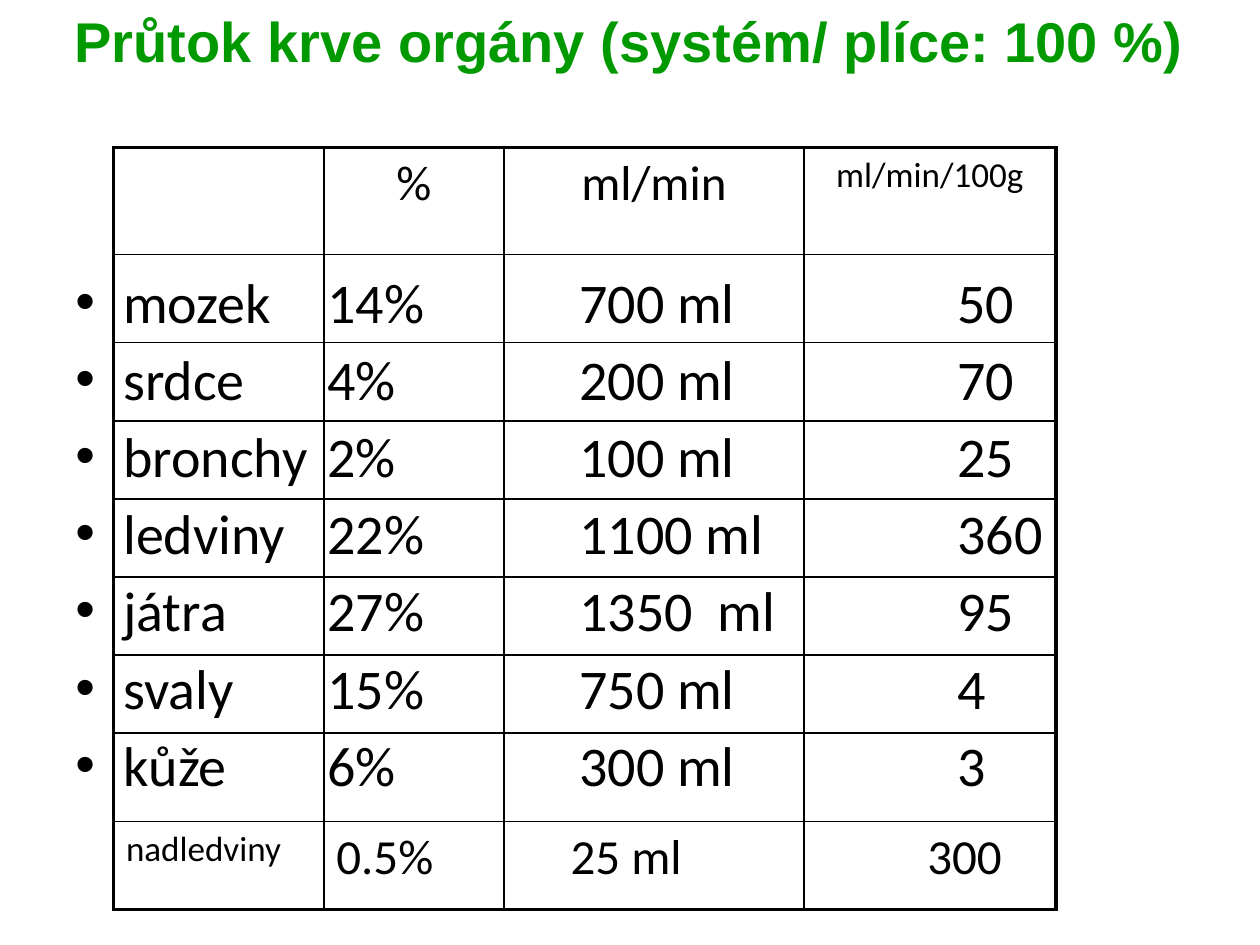
import pptx
import pptx.util
import pptx.dml.color
import pptx.enum.text
import pptx.oxml
import pptx.oxml.ns
from lxml import etree

Inches, Pt = pptx.util.Inches, pptx.util.Pt
PP_ALIGN, MSO_ANCHOR = pptx.enum.text.PP_ALIGN, pptx.enum.text.MSO_ANCHOR
qn = pptx.oxml.ns.qn

THEME = {
    "title": "009900", "text": "000000", "background": "FFFFFF",
    "title_font": "Arial", "body_font": "Calibri",
    "large": 32, "medium": 28, "small": 20,
    "outer_line": 2.25, "inner_line": 1,
}
HEADERS = ["", "%", "ml/min", "ml/min/100g"]
ORGANS = [
    ("mozek", "14%", "700 ml", "50"),
    ("srdce", "4%", "200 ml", "70"),
    ("bronchy", "2%", "100 ml", "25"),
    ("ledviny", "22%", "1100 ml", "360"),
    ("játra", "27%", "1350\tml", "95"),
    ("svaly", "15%", "750 ml", "4"),
    ("kůže", "6%", "300 ml", "3"),
]
ADRENALS = ["nadledviny", "0.5%", "25 ml", "300"]
ADRENAL_INDENTS = [0.1, 0.1, 0.53, 0.98]
COLUMNS = [1.67, 1.43, 2.38, 2.0]
ROWS = [0.85, 0.7] + [0.62] * 5 + [0.7, 0.7]
TAB_STOPS = [2, 4, 5.1, 7]


def write(p, text, size, font=THEME["body_font"], color=THEME["text"], bold=False, align=PP_ALIGN.LEFT):
    p.alignment = align
    r = p.add_run()
    r.text = text
    r.font.size = Pt(size)
    r.font.name = font
    r.font.bold = bold
    r.font.color.rgb = pptx.dml.color.RGBColor.from_string(color)


def set_border(cell, side, width):
    """Draw one cell side (L, R, T or B) as a solid line."""
    ln = etree.SubElement(cell._tc.get_or_add_tcPr(), qn(f"a:ln{side}"), w=str(Pt(width)))
    fill = etree.SubElement(ln, qn("a:solidFill"))
    etree.SubElement(fill, qn("a:srgbClr"), val=THEME["text"])


prs = pptx.Presentation()
prs.slide_width, prs.slide_height = Inches(10), Inches(7.5)
s = prs.slides.add_slide(prs.slide_layouts[5])

# Title
title = s.shapes.title
title.left, title.top = Inches(0.08), Inches(0)
title.width, title.height = Inches(9.83), Inches(1.25)
title.fill.solid()
title.fill.fore_color.rgb = pptx.dml.color.RGBColor.from_string(THEME["background"])
title.text_frame.vertical_anchor = MSO_ANCHOR.TOP
write(title.text_frame.paragraphs[0], "Průtok krve orgány (systém/ plíce: 100 %)", THEME["large"],
      font=THEME["title_font"], color=THEME["title"], bold=True, align=PP_ALIGN.CENTER)

# Bulleted organs, with tab stops that line up with the table columns
organs = s.shapes.add_textbox(Inches(0.5), Inches(1.45), Inches(9), Inches(4.95))
tf = organs.text_frame
tf.word_wrap = True
tf.margin_top = Inches(0.67)
for i, organ in enumerate(ORGANS):
    p = tf.add_paragraph() if i else tf.paragraphs[0]
    write(p, "\t".join(organ), THEME["large"])
    if i:
        p.space_before = Pt(5.7)
    pPr = p._p.get_or_add_pPr()
    pPr.set("marL", str(Inches(0.38)))
    pPr.set("indent", str(Inches(-0.38)))
    etree.SubElement(pPr, qn("a:buFont"), typeface=THEME["title_font"])
    etree.SubElement(pPr, qn("a:buChar"), char="•")
    tabs = etree.SubElement(pPr, qn("a:tabLst"))
    for stop in TAB_STOPS:
        etree.SubElement(tabs, qn("a:tab"), pos=str(Inches(stop)), algn="l")

# Table grid with header and last row
frame = s.shapes.add_table(len(ROWS), len(COLUMNS), Inches(0.9), Inches(1.17),
                           Inches(sum(COLUMNS)), Inches(sum(ROWS)))
table = frame.table
table.first_row = table.horz_banding = False
for column, width in zip(table.columns, COLUMNS):
    column.width = Inches(width)
for row, height in zip(table.rows, ROWS):
    row.height = Inches(height)

last_row, last_col = len(ROWS) - 1, len(COLUMNS) - 1
for i in range(len(ROWS)):
    for j in range(len(COLUMNS)):
        cell = table.cell(i, j)
        outer = {"L": j == 0, "R": j == last_col, "T": i == 0, "B": i == last_row}
        for side, is_outer in outer.items():
            set_border(cell, side, THEME["outer_line" if is_outer else "inner_line"])
        cell.fill.background()

for j, text in enumerate(HEADERS):
    if text:
        size = THEME["small" if j == last_col else "medium"]
        write(table.cell(0, j).text_frame.paragraphs[0], text, size, align=PP_ALIGN.CENTER)
for j, (text, indent) in enumerate(zip(ADRENALS, ADRENAL_INDENTS)):
    cell = table.cell(last_row, j)
    cell.margin_left = Inches(indent)
    write(cell.text_frame.paragraphs[0], text, THEME["medium" if j else "small"])

prs.save("out.pptx")
